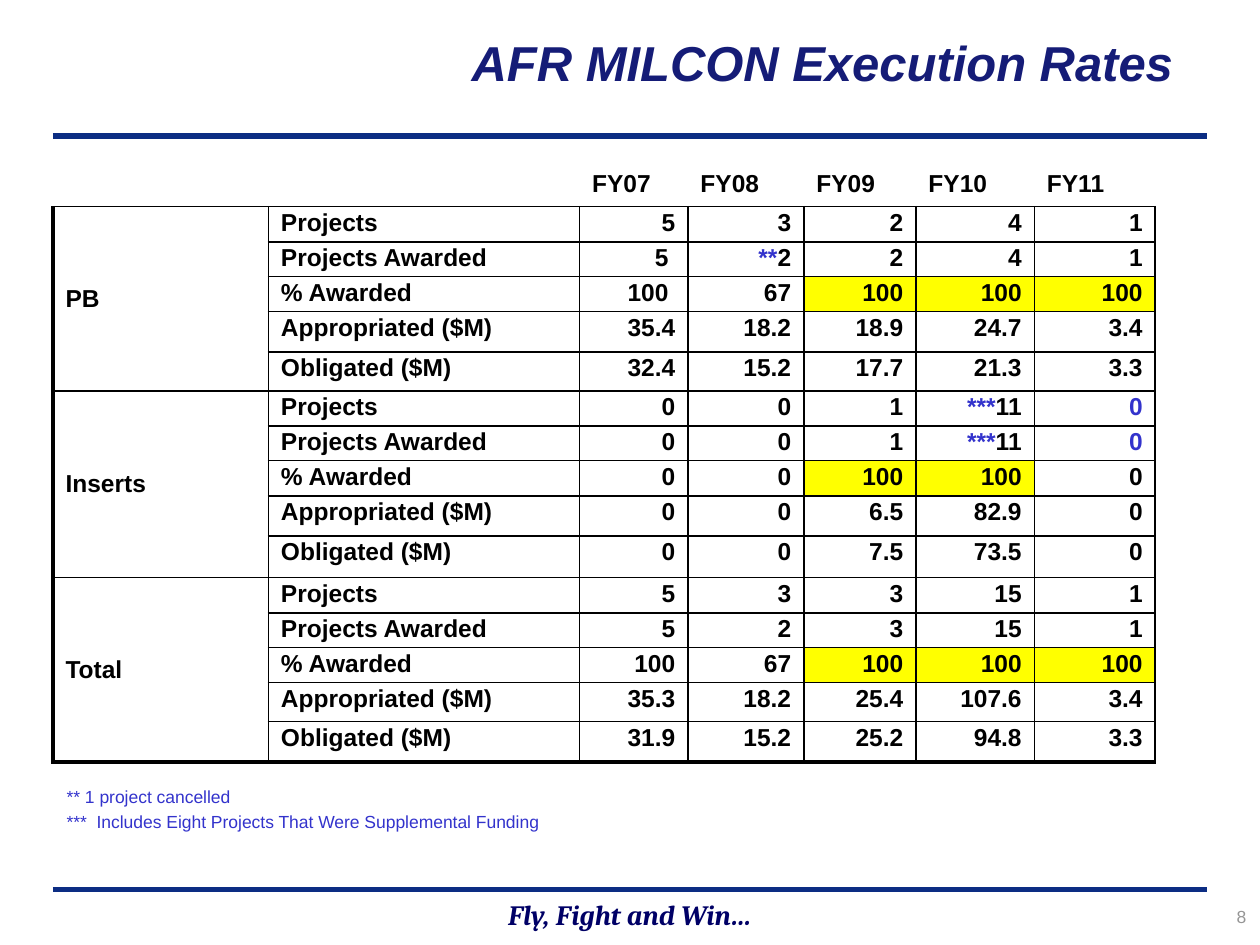
from dataclasses import dataclass

from pptx import Presentation, util as u
from pptx.dml.color import RGBColor
from pptx.enum import shapes, text
from pptx.oxml import ns, xmlchemy

ALIGN = text.PP_ALIGN
ANCHOR = text.MSO_ANCHOR


@dataclass(frozen=True)
class Theme:
    body_font: str = "Arial"
    motto_font: str = "Cambria"
    ink: str = "000000"
    title: str = "151C77"
    motto: str = "000066"
    note: str = "3333CC"
    number: str = "969696"
    rule: str = "0C2D83"
    highlight: str = "FFFF00"
    title_size: float = 28
    motto_size: float = 16
    table_size: float = 14
    small_size: float = 10
    thin: float = 1
    thick: float = 2.25
    rule_width: float = 3


YEARS = ["FY07", "FY08", "FY09", "FY10", "FY11"]
MEASURES = ["Projects", "Projects Awarded", "% Awarded", "Appropriated ($M)", "Obligated ($M)"]
# Text before "|" takes the footnote colour.
GROUPS = {
    "PB": [
        ["5", "3", "2", "4", "1"],
        ["5 ", "**|2", "2", "4", "1"],
        ["100 ", "67", "100", "100", "100"],
        ["35.4", "18.2", "18.9", "24.7", "3.4"],
        ["32.4", "15.2", "17.7", "21.3", "3.3"],
    ],
    "Inserts": [
        ["0", "0", "1", "***|11", "0|"],
        ["0", "0", "1", "***|11", "0|"],
        ["0", "0", "100", "100", "0"],
        ["0", "0", "6.5", "82.9", "0"],
        ["0", "0", "7.5", "73.5", "0"],
    ],
    "Total": [
        ["5", "3", "3", "15", "1"],
        ["5", "2", "3", "15", "1"],
        ["100", "67", "100", "100", "100"],
        ["35.3", "18.2", "25.4", "107.6", "3.4"],
        ["31.9", "15.2", "25.2", "94.8", "3.3"],
    ],
}
COLUMN_WIDTHS = [1.71, 2.47, 0.86, 0.92, 0.89, 0.94, 0.96]
COUNT_ROWS = [0.28, 0.27, 0.28]
MONEY_ROWS = [[0.32, 0.31], [0.32, 0.33], [0.31, 0.32]]
ROW_HEIGHTS = [0.34] + [height for money in MONEY_ROWS for height in COUNT_ROWS + money]
NO_GRID_STYLE = "{2D5ABB26-0587-4C30-8999-92F81FD0307C}"


class SlideBuilder:
    def __init__(self, page, theme):
        self.page = page
        self.theme = theme

    def style(self, para, size, color, name=None, bold=False, italic=False, align=ALIGN.LEFT):
        para.alignment = align
        font = para.font
        font.name, font.size = name or self.theme.body_font, u.Pt(size)
        font.bold, font.italic = bold, italic
        font.color.rgb = RGBColor.from_string(color)

    def place(self, shape, left, top, width, height):
        shape.left, shape.top = u.Inches(left), u.Inches(top)
        shape.width, shape.height = u.Inches(width), u.Inches(height)

    def rule(self, top):
        line = self.page.shapes.add_connector(
            shapes.MSO_CONNECTOR.STRAIGHT,
            u.Inches(0.42), u.Inches(top), u.Inches(9.58), u.Inches(top))
        line.line.color.rgb = RGBColor.from_string(self.theme.rule)
        line.line.width = u.Pt(self.theme.rule_width)
        line._element.spPr.append(xmlchemy.OxmlElement("a:effectLst"))

    def title(self, wording, *bounds):
        title = self.page.shapes.title
        self.place(title, *bounds)
        frame = title.text_frame
        frame.text = wording
        frame.auto_size = text.MSO_AUTO_SIZE.NONE
        frame.vertical_anchor = ANCHOR.MIDDLE
        self.style(frame.paragraphs[0], self.theme.title_size, self.theme.title,
                   bold=True, italic=True, align=ALIGN.RIGHT)

    def text_box(self, lines, bounds, size, color, anchor=ANCHOR.TOP, **font):
        box = self.page.shapes.add_textbox(*map(u.Inches, bounds))
        frame = box.text_frame
        frame.word_wrap = True
        frame.vertical_anchor = anchor
        frame.text = "\n".join(lines)
        for index, para in enumerate(frame.paragraphs):
            self.style(para, size, color, **font)
            if index:
                para.space_before = u.Pt(size * 0.2)

    def border(self, cell, **widths):
        """Draw the sides given as L, R, T, B, in that order, with widths in points."""
        properties = cell._tc.get_or_add_tcPr()
        for side, width in widths.items():
            line = xmlchemy.OxmlElement(f"a:ln{side}")
            line.set("w", str(u.Pt(width)))
            fill = xmlchemy.OxmlElement("a:solidFill")
            color = xmlchemy.OxmlElement("a:srgbClr")
            color.set("val", self.theme.ink)
            fill.append(color)
            line.append(fill)
            properties.append(line)

    def cell(self, cell, wording, align=ALIGN.LEFT, highlighted=False):
        para = cell.text_frame.paragraphs[0]
        noted, mark, plain = wording.rpartition("|")
        self.style(para, self.theme.table_size, self.theme.ink, bold=True, align=align)
        for part, is_note in ((noted, True), (plain, False)):
            if part:
                span = para.add_run()
                span.text = part
                if is_note:
                    span.font.color.rgb = RGBColor.from_string(self.theme.note)
        if highlighted:
            cell.fill.solid()
            cell.fill.fore_color.rgb = RGBColor.from_string(self.theme.highlight)
        else:
            cell.fill.background()

    def body_cell(self, cell, wording, left, bottom, **look):
        cell.margin_top = cell.margin_bottom = u.Inches(0.02)
        thin = self.theme.thin
        self.border(cell, L=left, R=thin, T=thin, B=bottom)
        self.cell(cell, wording, **look)

    def rates_table(self, left, top):
        frame = self.page.shapes.add_table(
            len(ROW_HEIGHTS), len(COLUMN_WIDTHS), u.Inches(left), u.Inches(top),
            u.Inches(sum(COLUMN_WIDTHS)), u.Inches(sum(ROW_HEIGHTS)))
        table = frame.table
        table.first_row = table.horz_banding = False
        table._tbl.tblPr.find(ns.qn("a:tableStyleId")).text = NO_GRID_STYLE
        for column, width in zip(table.columns, COLUMN_WIDTHS):
            column.width = u.Inches(width)
        for row, height in zip(table.rows, ROW_HEIGHTS):
            row.height = u.Inches(height)

        thin, thick = self.theme.thin, self.theme.thick
        for index, heading in enumerate(["", ""] + YEARS):
            self.border(table.cell(0, index), B=thin)
            self.cell(table.cell(0, index), heading)

        last = len(ROW_HEIGHTS) - 1
        for group_index, (group, values) in enumerate(GROUPS.items()):
            first = 1 + group_index * len(MEASURES)
            group_end = first + len(MEASURES) - 1
            group_bottom = thick if group_end == last else thin
            group_cell = table.cell(first, 0)
            group_cell.merge(table.cell(group_end, 0))
            group_cell.vertical_anchor = ANCHOR.MIDDLE
            for row, (measure, figures) in enumerate(zip(MEASURES, values), first):
                bottom = thick if row == last else thin
                self.body_cell(table.cell(row, 0), group if row == first else "",
                               thick, group_bottom)
                self.body_cell(table.cell(row, 1), measure, thin, bottom)
                for column, figure in enumerate(figures, 2):
                    full = measure == "% Awarded" and column >= 4 and figure == "100"
                    self.body_cell(table.cell(row, column), figure, thin, bottom,
                                   align=ALIGN.RIGHT, highlighted=full)


def main():
    deck = Presentation()
    deck.slide_width, deck.slide_height = u.Inches(10), u.Inches(7.5)
    theme = Theme()
    builder = SlideBuilder(deck.slides.add_slide(deck.slide_layouts[5]), theme)
    for top in (7.06, 1.08):
        builder.rule(top)
    builder.text_box(["Fly, Fight and Win…"], (0, 7.07, 10, 0.37), theme.motto_size, theme.motto,
                     anchor=ANCHOR.MIDDLE, name=theme.motto_font, bold=True, italic=True,
                     align=ALIGN.CENTER)
    builder.text_box(["8"], (8.74, 7.14, 1.25, 0.33), theme.small_size, theme.number,
                     align=ALIGN.RIGHT)
    builder.title("AFR MILCON Execution Rates", 1.47, 0, 7.94, 0.98)
    builder.rates_table(0.42, 1.3)
    builder.text_box(["** 1 project cancelled",
                      "***  Includes Eight Projects That Were Supplemental Funding"],
                     (0.43, 6.19, 4.81, 0.47), theme.small_size, theme.note)
    deck.save("out.pptx")


if __name__ == "__main__":
    main()
